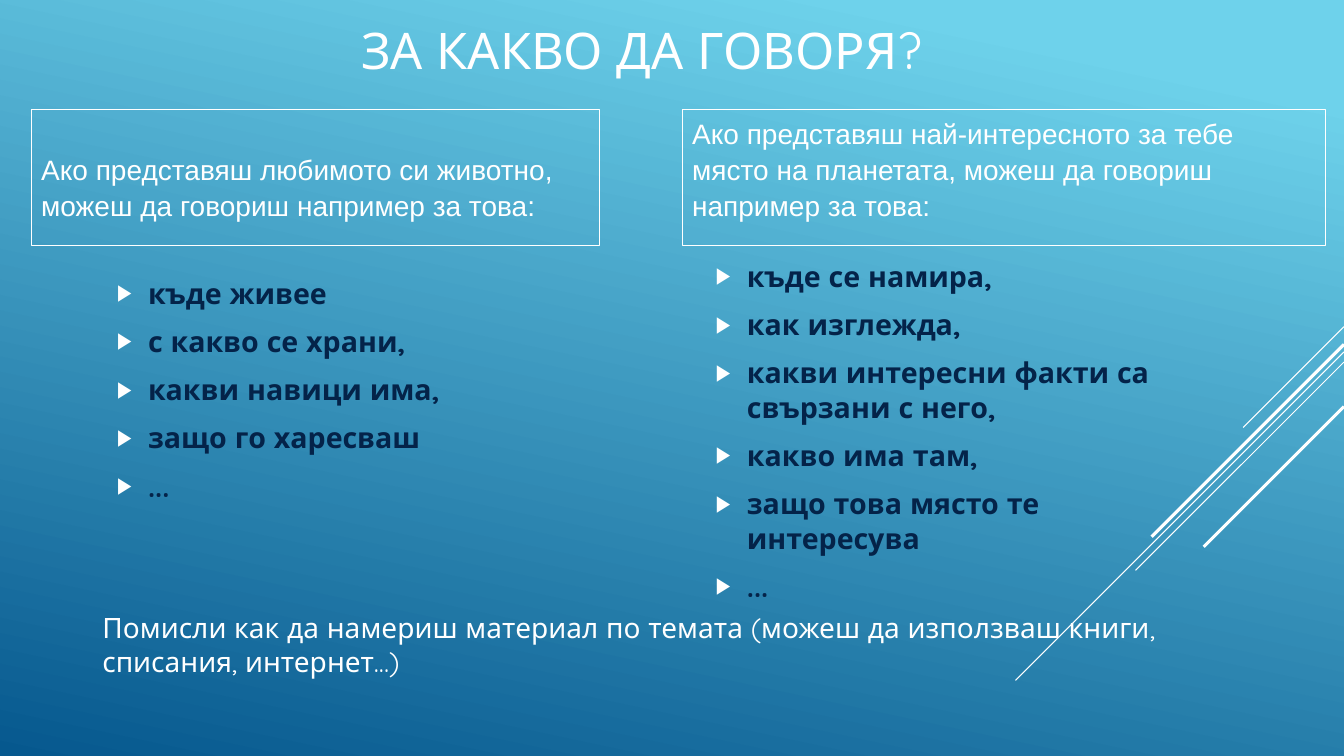
from lxml import etree
from pptx import Presentation
from pptx.dml.color import RGBColor
from pptx.enum.shapes import MSO_CONNECTOR
from pptx.enum.text import MSO_ANCHOR, MSO_AUTO_SIZE, PP_ALIGN
from pptx.oxml.ns import qn
from pptx.util import Inches, Pt

STRAIGHT = MSO_CONNECTOR.STRAIGHT
TOP, MIDDLE, BOTTOM = MSO_ANCHOR.TOP, MSO_ANCHOR.MIDDLE, MSO_ANCHOR.BOTTOM
NO_FIT, GROW = MSO_AUTO_SIZE.NONE, MSO_AUTO_SIZE.SHAPE_TO_FIT_TEXT
LEFT = PP_ALIGN.LEFT

WHITE = RGBColor(0xFF, 0xFF, 0xFF)
NAVY = RGBColor(0x04, 0x23, 0x49)
SKY = RGBColor(0x6E, 0xD2, 0xEB)
DEEP_BLUE = RGBColor(0x06, 0x58, 0x8E)

WIDTH, HEIGHT = Inches(13.33), Inches(7.5)
COLUMN, ROW = WIDTH / 16, HEIGHT / 9
COMPARISON_LAYOUT = 3 + 1
DISPLAY_FONT, PLAIN_FONT = "Quicksand", "Arial"

TITLE = "ЗА КАКВО ДА ГОВОРЯ?"
ANIMAL_INTRO = "Ако представяш любимото си животно, можеш да говориш например за това:"
ANIMAL_TOPICS = ["къде живее", "с какво се храни,", "какви навици има,",
                 "защо го харесваш", "..."]
PLACE_INTRO = ("Ако представяш най-интересното за тебе място на планетата, "
               "можеш да говориш например за това:")
PLACE_TOPICS = ["къде се намира,", "как изглежда,",
                "какви интересни факти са свързани с него,", "какво има там,",
                "защо това място те интересува", "..."]
ADVICE = ("Помисли как да намериш материал по темата "
          "(можеш да използваш книги, списания, интернет...)")
RAYS = [(3.89, 1.2, 0.75), (4.19, 3.91, 0.75), (4.31, 2.48, 0.75),
        (4.1, 2.29, 2.25), (4.84, 1.67, 2.25)]


def grid_box(column, row, columns, rows):
    """Turn grid units into left, top, width and height."""
    return (int(column * COLUMN), int(row * ROW),
            int(columns * COLUMN), int(rows * ROW))


def place(shape, *cells):
    """Move a placeholder to its cells of the grid."""
    shape.left, shape.top, shape.width, shape.height = grid_box(*cells)


def write(shape, lines, size=20, font=DISPLAY_FONT, color=WHITE, bold=False,
          anchor=TOP, fit=NO_FIT, before=0, after=0, spacing=None):
    """Fill a shape with formatted paragraphs and return them."""
    frame = shape.text_frame
    frame.text = "\n".join(lines)
    frame.word_wrap = True
    frame.auto_size = fit
    frame.vertical_anchor = anchor
    for paragraph in frame.paragraphs:
        paragraph.alignment = LEFT
        paragraph.space_before, paragraph.space_after = Pt(before), Pt(after)
        paragraph.line_spacing = spacing
        for run in paragraph.runs:
            run.font.size, run.font.name = Pt(size), font
            run.font.bold = bold
            run.font.color.rgb = color
    return frame.paragraphs


def add_bullet(paragraph):
    """Give a paragraph a white triangle and a hanging indent."""
    properties = paragraph._p.get_or_add_pPr()
    properties.set("marL", str(Inches(0.81)))
    properties.set("indent", str(Inches(-0.31)))
    bullet_color = etree.SubElement(properties, qn("a:buClr"))
    etree.SubElement(bullet_color, qn("a:srgbClr"), val=str(WHITE))
    etree.SubElement(properties, qn("a:buSzPct"), val="80000")
    etree.SubElement(properties, qn("a:buFont"), typeface=PLAIN_FONT)
    etree.SubElement(properties, qn("a:buChar"), char="▶")


def fill_intro(intro, text, *cells):
    """Write an introduction in an outlined box."""
    place(intro, *cells)
    intro.line.color.rgb = WHITE
    intro.line.width = Pt(0.75)
    intro.text_frame.margin_bottom = int(0.28 * ROW)
    write(intro, [text], font=PLAIN_FONT, anchor=BOTTOM, spacing=1.06)


def fill_topics(topics, lines, *cells):
    """Write a bulleted list of topics."""
    place(topics, *cells)
    for topic in write(topics, lines, size=20.4, color=NAVY, bold=True,
                       before=4, after=6):
        add_bullet(topic)


def add_ray(slide, row, reach, weight):
    """Draw a diagonal from the right edge, behind the text."""
    drop = int(reach * ROW)
    start = int(row * ROW)
    ray = slide.shapes.add_connector(STRAIGHT, WIDTH, start,
                                     WIDTH - drop, start + drop)
    ray.line.color.rgb = WHITE
    ray.line.width = Pt(weight)
    etree.SubElement(ray.element.spPr, qn("a:effectLst"))
    ray.element.getparent().insert(2, ray.element)


def paint_background(slide):
    """Fill the background with a blue gradient."""
    fill = slide.background.fill
    fill.gradient()
    fill.gradient_angle = 360 - 102
    for stop, color, position in zip(fill.gradient_stops, (SKY, DEEP_BLUE), (0.1, 1)):
        stop.color.rgb = color
        stop.position = position


def main():
    """Build and save the slide."""
    presentation = Presentation()
    presentation.slide_width, presentation.slide_height = WIDTH, HEIGHT
    slide = presentation.slides.add_slide(
        presentation.slide_layouts[COMPARISON_LAYOUT])
    paint_background(slide)
    title, animal_intro, animal_topics, place_intro, place_topics = slide.placeholders
    place(title, 4.18, 0.02, 7.66, 1.14)
    write(title, [TITLE], size=36, anchor=MIDDLE)
    fill_intro(animal_intro, ANIMAL_INTRO, 0.37, 1.3, 6.77, 1.62)
    fill_topics(animal_topics, ANIMAL_TOPICS, 0.67, 3.22, 6.77, 3.9)
    fill_intro(place_intro, PLACE_INTRO, 8.12, 1.3, 7.66, 1.62)
    fill_topics(place_topics, PLACE_TOPICS, 7.8, 3.02, 6.47, 3.9)
    advice = slide.shapes.add_textbox(*grid_box(1.1, 7.21, 14.39, 0.53))
    write(advice, [ADVICE], fit=GROW)
    for ray in RAYS:
        add_ray(slide, *ray)
    presentation.save("out.pptx")


if __name__ == "__main__":
    main()
